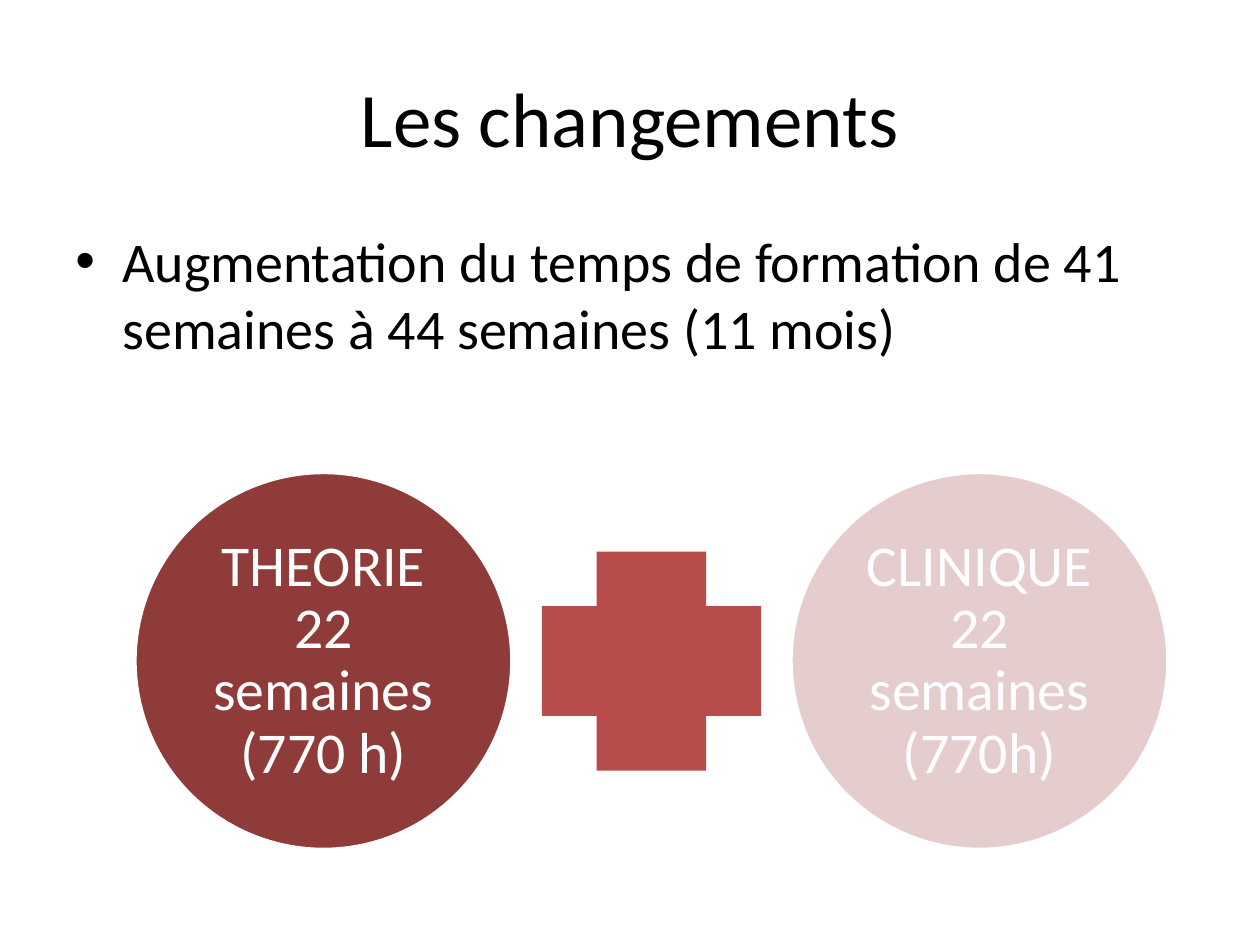
import lxml.etree
import pptx
import pptx.dml.color
import pptx.enum.shapes
import pptx.enum.text
import pptx.oxml.ns
import pptx.util
from dataclasses import dataclass

EMU_PER_PX = 914400 / 126
SHAPES = pptx.enum.shapes.MSO_SHAPE
ALIGN = pptx.enum.text.PP_ALIGN
ANCHOR = pptx.enum.text.MSO_ANCHOR


@dataclass(frozen=True)
class Theme:
    font: str = "Calibri"
    text: str = "000000"
    light: str = "FFFFFF"
    theory: str = "8E3B39"
    plus: str = "B74C4A"
    clinic: str = "E6CDCD"
    title_size: int = 44
    body_size: int = 32
    circle_size: int = 33
    outline: int = 2


def px(length):
    return pptx.util.Emu(round(length * EMU_PER_PX))


def rgb(value):
    return pptx.dml.color.RGBColor.from_string(value)


def set_all(target, values):
    for name, value in values.items():
        setattr(target, name, value)


class SlideBuilder:
    def __init__(self, slide, theme):
        self.slide = slide
        self.theme = theme

    def fill_text(self, shape, text, size, color, frame_format, paragraph_format):
        frame = shape.text_frame
        set_all(frame, {"word_wrap": True, **frame_format})
        paragraph = frame.paragraphs[0]
        set_all(paragraph, paragraph_format)
        run = paragraph.add_run()
        run.text = text
        set_all(run.font, {"name": self.theme.font, "size": pptx.util.Pt(size)})
        run.font.color.rgb = rgb(color)
        return paragraph

    def text_box(self, box, text, size, anchor, **paragraph_format):
        shape = self.slide.shapes.add_textbox(*map(px, box))
        return self.fill_text(shape, text, size, self.theme.text,
                              {"vertical_anchor": anchor}, paragraph_format)

    def bullet(self, box, text, size):
        paragraph = self.text_box(box, text, size, ANCHOR.TOP,
                                  space_before=pptx.util.Pt(size * 0.2))
        indent = px(47)
        properties = paragraph._p.get_or_add_pPr()
        properties.set("marL", str(indent))
        properties.set("indent", str(-indent))
        for tag, name, value in (("a:buFont", "typeface", "Arial"),
                                 ("a:buChar", "char", "•")):
            lxml.etree.SubElement(properties, pptx.oxml.ns.qn(tag)).set(name, value)

    def solid(self, kind, left, center_y, side, color):
        shape = self.slide.shapes.add_shape(
            kind, px(left), px(center_y - side / 2), px(side), px(side))
        shape.shadow.inherit = False
        shape.fill.solid()
        shape.fill.fore_color.rgb = rgb(color)
        shape.line.fill.background()
        return shape

    def circle(self, left, center_y, side, color, text):
        theme = self.theme
        shape = self.solid(SHAPES.OVAL, left, center_y, side, color)
        shape.line.color.rgb = rgb(theme.light)
        shape.line.width = pptx.util.Pt(theme.outline)
        margins = {f"margin_{edge}": px(6) for edge in ("left", "top", "right", "bottom")}
        self.fill_text(shape, text, theme.circle_size, theme.light,
                       {"vertical_anchor": ANCHOR.MIDDLE, **margins},
                       {"alignment": ALIGN.CENTER, "line_spacing": 0.9,
                        "space_after": pptx.util.Pt(theme.circle_size * 0.35)})


def main():
    presentation = pptx.Presentation()
    set_all(presentation, {"slide_width": px(1260), "slide_height": px(945)})
    theme = Theme()
    builder = SlideBuilder(presentation.slides.add_slide(presentation.slide_layouts[6]), theme)

    # Title and main point
    builder.text_box((63, 38, 1134, 157), "Les changements", theme.title_size,
                     ANCHOR.MIDDLE, alignment=ALIGN.CENTER)
    builder.bullet((63, 220, 1134, 624),
                   "Augmentation du temps de formation de 41 semaines à 44 semaines (11 mois)",
                   theme.body_size)

    # Theory plus clinic, evenly spaced on one axis
    center_y, circle_side, plus_side, gap = 661, 377, 219, 30
    theory_left = 135
    plus_left = theory_left + circle_side + gap
    clinic_left = plus_left + plus_side + gap
    builder.circle(theory_left, center_y, circle_side, theme.theory,
                   "THEORIE 22 semaines (770 h)")
    builder.solid(SHAPES.CROSS, plus_left, center_y, plus_side, theme.plus)
    builder.circle(clinic_left, center_y, circle_side, theme.clinic,
                   "CLINIQUE 22 semaines (770h)")

    presentation.save("out.pptx")


if __name__ == "__main__":
    main()
